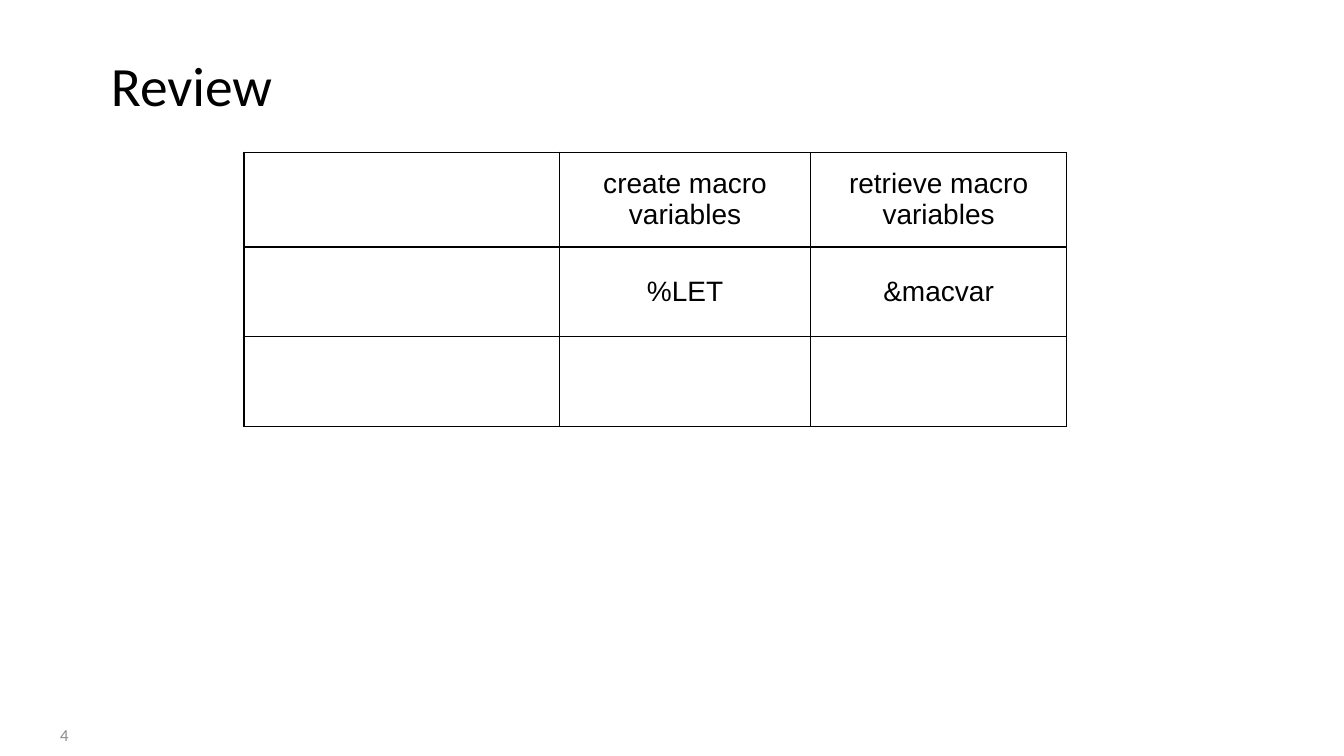
from lxml.etree import SubElement as Sub
from pptx import Presentation
from pptx.dml.color import RGBColor as RGB
from pptx.enum.text import MSO_ANCHOR as ANCHOR, PP_ALIGN as ALIGN
from pptx.oxml.ns import qn
from pptx.util import Pt

PX = 9144  # EMU per px, 100 px to the inch
COLORS = {"ink": "000000", "muted": "8C8C8C", "paper": "FFFFFF"}
COL_WIDTHS = [313, 249, 254]
ROW_HEIGHTS = [94, 89, 89]
REVIEW_ROWS = [
    ["", "create macro variables", "retrieve macro variables"],
    ["", "%LET", "&macvar"],
    ["", "", ""],
]


def px(n):
    return n * PX


def write(tf, text, size, font="Calibri", color="ink", align=ALIGN.LEFT, spacing=None):
    tf.word_wrap = True
    p = tf.paragraphs[0]
    p.alignment = align
    p.line_spacing = spacing
    r = p.add_run()
    r.text = text
    r.font.size = Pt(size)
    r.font.name = font
    r.font.color.rgb = RGB.from_string(COLORS[color])


def add_borders(cell, width=1):
    tcPr = cell._tc.get_or_add_tcPr()
    for side in ("lnL", "lnR", "lnT", "lnB"):
        ln = Sub(tcPr, qn(f"a:{side}"), w=str(Pt(width)))
        fill = Sub(ln, qn("a:solidFill"))
        Sub(fill, qn("a:srgbClr"), val=COLORS["ink"])


def place_title(slide, text, x, y, w, h):
    sp = slide.shapes.title
    sp.left, sp.top, sp.width, sp.height = map(px, (x, y, w, h))
    sp.text_frame.vertical_anchor = ANCHOR.MIDDLE
    write(sp.text_frame, text, 39.6, spacing=0.9)


def place_table(slide, rows, x, y):
    w, h = sum(COL_WIDTHS), sum(ROW_HEIGHTS)
    table = slide.shapes.add_table(len(rows), len(rows[0]), *map(px, (x, y, w, h))).table
    table.first_row = table.horz_banding = False
    for col, width in zip(table.columns, COL_WIDTHS):
        col.width = px(width)
    for row, height, texts in zip(table.rows, ROW_HEIGHTS, rows):
        row.height = px(height)
        for cell, text in zip(row.cells, texts):
            add_borders(cell)
            cell.fill.background()
            cell.vertical_anchor = ANCHOR.MIDDLE
            cell.margin_left = cell.margin_right = px(10)
            cell.margin_top = cell.margin_bottom = px(10)
            if text:
                write(cell.text_frame, text, 20, font="Arial", align=ALIGN.CENTER)


def place_page_number(slide, number, x, y, w, h):
    tf = slide.shapes.add_textbox(*map(px, (x, y, w, h))).text_frame
    tf.vertical_anchor = ANCHOR.MIDDLE
    write(tf, number, 12, color="muted", align=ALIGN.RIGHT)


def main():
    prs = Presentation()
    prs.slide_width, prs.slide_height = px(1333), px(750)
    slide = prs.slides.add_slide(prs.slide_layouts[5])  # title only
    bg = slide.background.fill
    bg.solid()
    bg.fore_color.rgb = RGB.from_string(COLORS["paper"])

    # Heading
    place_title(slide, "Review", 100, 50, 1233, 75)
    # Macro variable overview
    place_table(slide, REVIEW_ROWS, 242, 151)
    # Footer
    place_page_number(slide, "4", 0, 708, 78, 42)

    prs.save("out.pptx")


if __name__ == "__main__":
    main()
